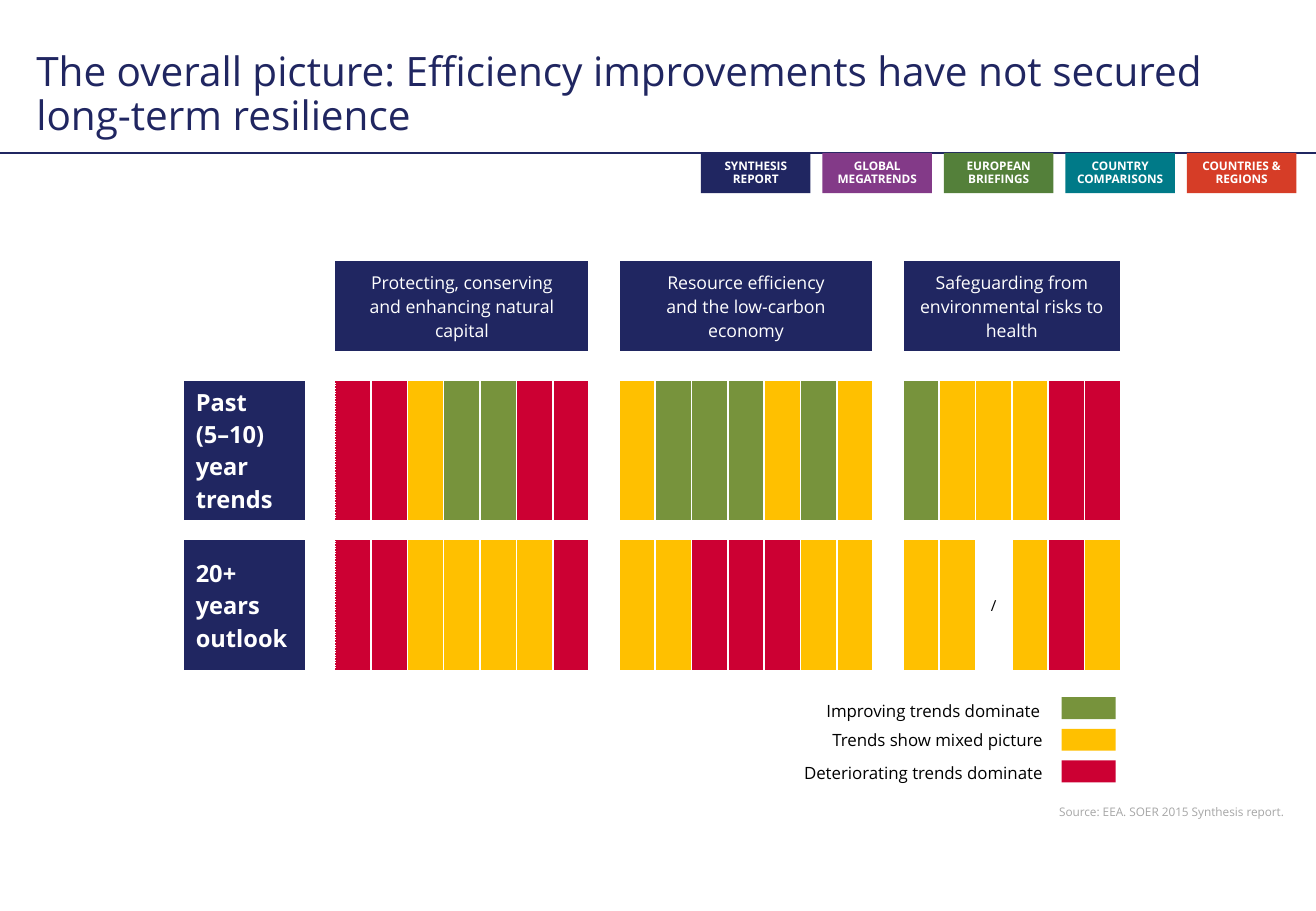
from dataclasses import dataclass

import lxml.etree
import pptx
import pptx.dml.color
import pptx.enum.shapes
import pptx.enum.text
import pptx.oxml.ns
import pptx.util

Cm = pptx.util.Cm
Pt = pptx.util.Pt
Align = pptx.enum.text.PP_ALIGN
Anchor = pptx.enum.text.MSO_ANCHOR
qn = pptx.oxml.ns.qn

FONT = "Open Sans"
NAVY, WHITE, BLACK, GREY = "202661", "FFFFFF", "000000", "A6A6A6"
IMPROVING, MIXED, DETERIORATING = "77933C", "FFC000", "CC0033"

# One letter per table column; "/" is a cell without fill.
CELL_FILLS = {"N": NAVY, ".": WHITE, "I": IMPROVING, "M": MIXED, "D": DETERIORATING}
HEADER = "//NNNNNNN.NNNNNNN.NNNNNN"
SPACER = "." * len(HEADER)
PAST = "N.DDMIIDD.MIIIMIM.IMMMDD"
OUTLOOK = "N.DDMMMMD.MMDDDMM.MM/MDM"
THEMES = ((2, 8), (10, 16), (18, 23))
TABLE_LEFT, LABEL_WIDTH, GAP_WIDTH, UNIT_WIDTH = 3.84, 2.54, 0.62, 0.76


@dataclass(frozen=True)
class Style:
    size: float
    color: str
    bold: bool = False
    align: Align = Align.LEFT
    spacing: float = 1.0


@dataclass(frozen=True)
class Row:
    height: float
    codes: str
    texts: dict[int, tuple[list[str], Style]]
    merged: bool = False
    top: str = "thin"
    bottom: str = "thin"


@dataclass(frozen=True)
class LegendEntry:
    text: str
    color: str
    label_right: float
    label_top: float


TITLE_STYLE = Style(24, NAVY, spacing=0.9)
TAB_STYLE = Style(7, WHITE, bold=True, align=Align.CENTER, spacing=0.93)
THEME_STYLE = Style(10.5, WHITE, align=Align.CENTER)
PERIOD_STYLE = Style(14, WHITE, bold=True)
SLASH_STYLE = Style(9, BLACK, align=Align.CENTER)
LEGEND_STYLE = Style(10, BLACK, align=Align.RIGHT)
SOURCE_STYLE = Style(7, GREY, align=Align.RIGHT)

TABS = (
    (["SYNTHESIS", "REPORT"], NAVY),
    (["GLOBAL", "MEGATRENDS"], "833A88"),
    (["EUROPEAN", "BRIEFINGS"], "54803A"),
    (["COUNTRY COMPARISONS"], "007A88"),
    (["COUNTRIES & REGIONS"], "D63D27"),
)
LEGEND = (
    LegendEntry("Improving trends dominate", IMPROVING, 22.0, 14.53),
    LegendEntry("Trends show mixed picture", MIXED, 22.05, 15.14),
    LegendEntry("Deteriorating trends dominate", DETERIORATING, 22.05, 15.82),
)
TREND_ROWS = (
    Row(1.95, HEADER, {
        2: (["Protecting, conserving", "and enhancing natural capital"], THEME_STYLE),
        10: (["Resource efficiency", "and the low-carbon", "economy"], THEME_STYLE),
        18: (["Safeguarding from", "environmental risks to health"], THEME_STYLE),
    }, merged=True, bottom="thick"),
    Row(0.57, SPACER, {}, merged=True, top="thick", bottom="dotted"),
    Row(2.93, PAST, {0: (["Past", "(5–10) year trends"], PERIOD_STYLE)}, top="dotted"),
    Row(0.38, SPACER, {}),
)
OUTLOOK_ROWS = (
    Row(2.79, OUTLOOK, {
        0: (["20+ years", "outlook"], PERIOD_STYLE),
        20: (["/"], SLASH_STYLE),
    }, bottom="thick"),
)


def rgb(color: str) -> pptx.dml.color.RGBColor:
    return pptx.dml.color.RGBColor.from_string(color)


def write(frame, lines: list[str], style: Style) -> None:
    for index, line in enumerate(lines):
        para = frame.add_paragraph() if index else frame.paragraphs[0]
        para.alignment = style.align
        para.line_spacing = style.spacing
        span = para.add_run()
        span.text = line
        span.font.name = FONT
        span.font.size = Pt(style.size)
        span.font.bold = style.bold
        span.font.color.rgb = rgb(style.color)


def add_text(page, left: float, top: float, width: float, height: float,
             text: str, style: Style, anchor: Anchor) -> None:
    box = page.shapes.add_textbox(Cm(left), Cm(top), Cm(width), Cm(height))
    box.text_frame.word_wrap = True
    box.text_frame.vertical_anchor = anchor
    write(box.text_frame, [text], style)


def add_block(page, left: float, top: float, width: float, height: float, color: str):
    block = page.shapes.add_shape(pptx.enum.shapes.MSO_SHAPE.RECTANGLE,
                                  Cm(left), Cm(top), Cm(width), Cm(height))
    block.shadow.inherit = False
    block.fill.solid()
    block.fill.fore_color.rgb = rgb(color)
    block.line.fill.background()
    return block


def add_rule(page, width: float, top: float) -> None:
    rule = page.shapes.add_connector(pptx.enum.shapes.MSO_CONNECTOR.STRAIGHT,
                                     0, Cm(top), Cm(width), Cm(top))
    rule.line.color.rgb = rgb(NAVY)
    rule.line.width = Pt(0.75)
    lxml.etree.SubElement(rule._element.spPr, qn("a:effectLst"))


def add_tab(page, index: int, lines: list[str], color: str) -> None:
    frame = add_block(page, 14.66 + 2.54 * index, 3.2, 2.29, 0.84, color).text_frame
    frame.margin_left = frame.margin_right = Cm(0.1)
    frame.margin_top = frame.margin_bottom = Cm(0.1)
    frame.word_wrap = True
    frame.vertical_anchor = Anchor.MIDDLE
    write(frame, lines, TAB_STYLE)


def add_border(cell, side: str, kind: str) -> None:
    """Draw one white cell edge; side is L, R, T or B."""
    width = {"thin": 1, "thick": 3, "dotted": 0.25}[kind]
    edge = lxml.etree.SubElement(cell._tc.get_or_add_tcPr(), qn(f"a:ln{side}"),
                                 w=str(Pt(width)))
    fill = lxml.etree.SubElement(edge, qn("a:solidFill"))
    lxml.etree.SubElement(fill, qn("a:srgbClr"), val=WHITE)
    if kind == "dotted":
        lxml.etree.SubElement(edge, qn("a:prstDash"), val="sysDot")


def style_cell(cell, row: Row, column: int) -> None:
    is_period = row.codes in (PAST, OUTLOOK)
    add_border(cell, "L", "dotted" if is_period and column <= 2 else "thin")
    add_border(cell, "R", "dotted" if is_period and column <= 1 else "thin")
    add_border(cell, "T", row.top)
    add_border(cell, "B", row.bottom)
    cell.margin_top = cell.margin_bottom = 0
    cell.vertical_anchor = Anchor.MIDDLE
    code = row.codes[column]
    if code in CELL_FILLS:
        cell.fill.solid()
        cell.fill.fore_color.rgb = rgb(CELL_FILLS[code])
    else:
        cell.fill.background()
    if column in row.texts:
        write(cell.text_frame, *row.texts[column])
    else:
        lxml.etree.SubElement(cell.text_frame.paragraphs[0]._p,
                              qn("a:endParaRPr"), sz="100")


def add_trend_table(page, top: float, rows: tuple[Row, ...]) -> None:
    widths = [LABEL_WIDTH] + [GAP_WIDTH if code == "." else UNIT_WIDTH for code in PAST[1:]]
    table = page.shapes.add_table(len(rows), len(widths), Cm(TABLE_LEFT), Cm(top),
                                  Cm(sum(widths)), Cm(sum(row.height for row in rows))).table
    table.first_row = table.horz_banding = False
    for column, width in enumerate(widths):
        table.columns[column].width = Cm(width)
    for index, row in enumerate(rows):
        table.rows[index].height = Cm(row.height)
        for column in range(len(widths)):
            style_cell(table.cell(index, column), row, column)
        if row.merged:
            for first, last in THEMES:
                table.cell(index, first).merge(table.cell(index, last))


def main() -> None:
    deck = pptx.Presentation()
    deck.slide_width, deck.slide_height = Cm(27.52), Cm(19.05)
    page = deck.slides.add_slide(deck.slide_layouts[6])

    add_rule(page, 27.52, 3.2)
    for index, (lines, color) in enumerate(TABS):
        add_tab(page, index, lines, color)
    add_text(page, 0.51, 0.36, 26.47, 2.67,
             "The overall picture: Efficiency improvements have not secured "
             "long-term resilience", TITLE_STYLE, Anchor.BOTTOM)
    add_trend_table(page, 5.44, TREND_ROWS)
    add_trend_table(page, 11.27, OUTLOOK_ROWS)
    for index, entry in enumerate(LEGEND):
        add_block(page, 22.2, 14.58 + 0.66 * index, 1.13, 0.46, entry.color)
        add_text(page, entry.label_right - 6.3, entry.label_top, 6.3, 0.69,
                 entry.text, LEGEND_STYLE, Anchor.TOP)
    add_text(page, 0.51, 15.9, 26.59, 1.35,
             "Source: EEA. SOER 2015 Synthesis report.", SOURCE_STYLE, Anchor.BOTTOM)
    deck.save("out.pptx")


if __name__ == "__main__":
    main()
